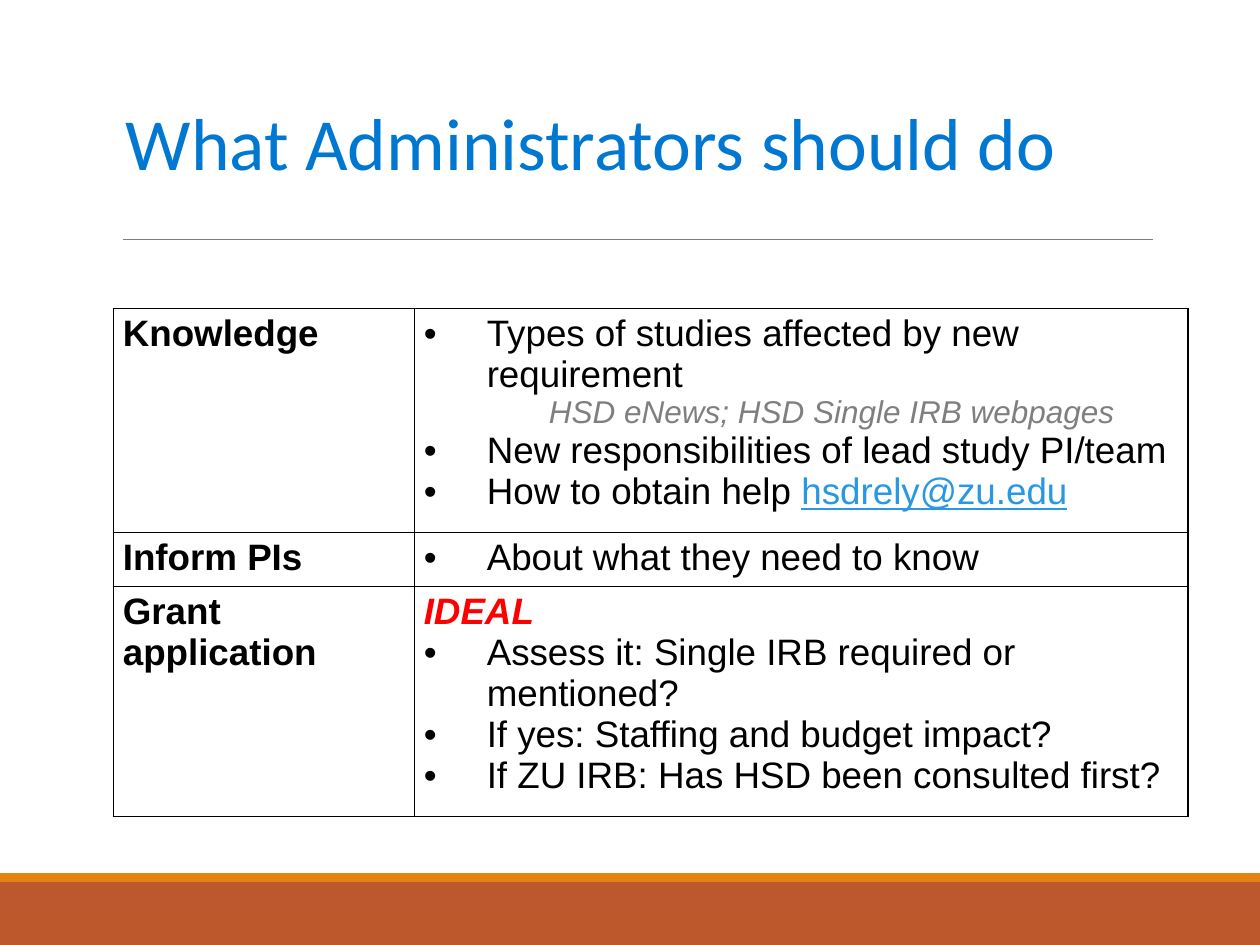
from dataclasses import dataclass

import pptx
import pptx.dml.color
import pptx.enum.shapes
import pptx.enum.text
import pptx.oxml.ns
import pptx.util
from lxml import etree

Pt = pptx.util.Pt
ALIGN = pptx.enum.text.PP_ALIGN
ANCHOR = pptx.enum.text.MSO_ANCHOR
qn = pptx.oxml.ns.qn


@dataclass(frozen=True)
class Theme:
    title_font: str = "Calibri"
    body_font: str = "Arial"
    title_size: float = 42
    body_size: float = 21
    note_size: float = 18
    title: str = "0077D0"
    ink: str = "000000"
    grey: str = "7F7F7F"
    link: str = "2998E3"
    alert: str = "FF0000"
    band: str = "BD582C"
    stripe: str = "E48312"


THEME = Theme()


@dataclass(frozen=True)
class Span:
    text: str
    size: float = THEME.body_size
    color: str = THEME.ink
    font: str = THEME.body_font
    bold: bool = False
    italic: bool = False
    underline: bool = False


@dataclass(frozen=True)
class Para:
    spans: tuple[Span, ...]
    bullet: bool = False
    align: ALIGN = ALIGN.LEFT
    indent: float = 0


@dataclass(frozen=True)
class Band:
    top: float
    height: float
    color: str


@dataclass(frozen=True)
class Row:
    height: float
    label: str
    details: tuple[Para, ...]


def rgb(color: str) -> pptx.dml.color.RGBColor:
    return pptx.dml.color.RGBColor.from_string(color)


def bullet(*spans: Span) -> Para:
    return Para(spans, bullet=True, indent=36)


def add_span(para, span: Span) -> None:
    run = para.add_run()
    run.text = span.text
    font = run.font
    font.name, font.size = span.font, Pt(span.size)
    font.bold, font.italic, font.underline = span.bold, span.italic, span.underline
    font.color.rgb = rgb(span.color)


def write_paras(frame, paras: tuple[Para, ...]) -> None:
    for index, item in enumerate(paras):
        para = frame.add_paragraph() if index else frame.paragraphs[0]
        para.alignment = item.align
        props = para._p.get_or_add_pPr()
        props.set("marL", str(Pt(item.indent)))
        if item.bullet:
            props.set("indent", str(-Pt(item.indent)))
            color = etree.SubElement(props, qn("a:buClr"))
            etree.SubElement(color, qn("a:srgbClr"), val=THEME.ink)
            etree.SubElement(props, qn("a:buFont"), typeface=THEME.body_font)
            etree.SubElement(props, qn("a:buChar"), char="•")
        for span in item.spans:
            add_span(para, span)


def add_band(page, band: Band) -> None:
    box = page.shapes.add_shape(
        pptx.enum.shapes.MSO_SHAPE.RECTANGLE, 0, Pt(band.top), Pt(720), Pt(band.height))
    box.shadow.inherit = False
    box.fill.solid()
    box.fill.fore_color.rgb = rgb(band.color)
    box.line.fill.background()


def add_rule(page, left: float, right: float, top: float) -> None:
    rule = page.shapes.add_connector(
        pptx.enum.shapes.MSO_CONNECTOR.STRAIGHT, Pt(left), Pt(top), Pt(right), Pt(top))
    rule.line.color.rgb = rgb(THEME.grey)
    rule.line.width = Pt(0.75)
    etree.SubElement(rule._element.spPr, qn("a:effectLst"))


def add_title(page, text: str) -> None:
    box = page.shapes.add_textbox(Pt(64.8), Pt(50.4), Pt(613.4), Pt(59))
    frame = box.text_frame
    frame.word_wrap = True
    frame.vertical_anchor = ANCHOR.BOTTOM
    span = Span(text, THEME.title_size, THEME.title, THEME.title_font)
    write_paras(frame, (Para((span,)),))
    frame.paragraphs[0].line_spacing = 0.85


def fill_cell(cell, paras: tuple[Para, ...]) -> None:
    cell.margin_left = cell.margin_right = Pt(5.4)
    cell.margin_top = cell.margin_bottom = Pt(2.7)
    cell.vertical_anchor = ANCHOR.TOP
    cell.fill.background()
    write_paras(cell.text_frame, paras)
    # Borders come before the fill in the cell properties
    props = cell._tc.get_or_add_tcPr()
    for index, side in enumerate(("a:lnL", "a:lnR", "a:lnT", "a:lnB")):
        line = etree.Element(qn(side), w=str(Pt(1)))
        fill = etree.SubElement(line, qn("a:solidFill"))
        etree.SubElement(fill, qn("a:srgbClr"), val=THEME.ink)
        props.insert(index, line)


def add_duties(page, widths: tuple[float, ...], rows: tuple[Row, ...]) -> None:
    height = sum(row.height for row in rows)
    table = page.shapes.add_table(
        len(rows), len(widths), Pt(64.8), Pt(176.4), Pt(sum(widths)), Pt(height)).table
    table.first_row = table.horz_banding = False
    for column, width in zip(table.columns, widths):
        column.width = Pt(width)
    for index, row in enumerate(rows):
        table.rows[index].height = Pt(row.height)
        fill_cell(table.cell(index, 0), (Para((Span(row.label, bold=True),)),))
        fill_cell(table.cell(index, 1), row.details)


BANDS = (Band(504, 36, THEME.band), Band(499, 5, THEME.stripe))

ROWS = (
    Row(106.5, "Knowledge", (
        bullet(Span("Types of studies affected by new requirement")),
        Para((Span("HSD eNews; HSD Single IRB webpages", THEME.note_size,
                   THEME.grey, italic=True),), align=ALIGN.CENTER, indent=35),
        bullet(Span("New responsibilities of lead study PI/team")),
        bullet(Span("How to obtain help "),
               Span("hsdrely@zu.edu", color=THEME.link, underline=True)),
    )),
    Row(31, "Inform PIs", (bullet(Span("About what they need to know")),)),
    Row(106.5, "Grant application", (
        Para((Span("IDEAL", color=THEME.alert, bold=True, italic=True),)),
        bullet(Span("Assess it: Single IRB required or mentioned?")),
        bullet(Span("If yes: Staffing and budget impact?")),
        bullet(Span("If ZU IRB: Has HSD been consulted first?")),
    )),
)


def main() -> None:
    deck = pptx.Presentation()
    deck.slide_width, deck.slide_height = Pt(720), Pt(540)
    page = deck.slides.add_slide(deck.slide_layouts[6])

    # Footer bands and title rule
    for band in BANDS:
        add_band(page, band)
    add_rule(page, 70.5, 659, 136.8)

    # Title and table of duties
    add_title(page, "What Administrators should do")
    add_duties(page, (172, 442), ROWS)

    deck.save("out.pptx")


if __name__ == "__main__":
    main()
